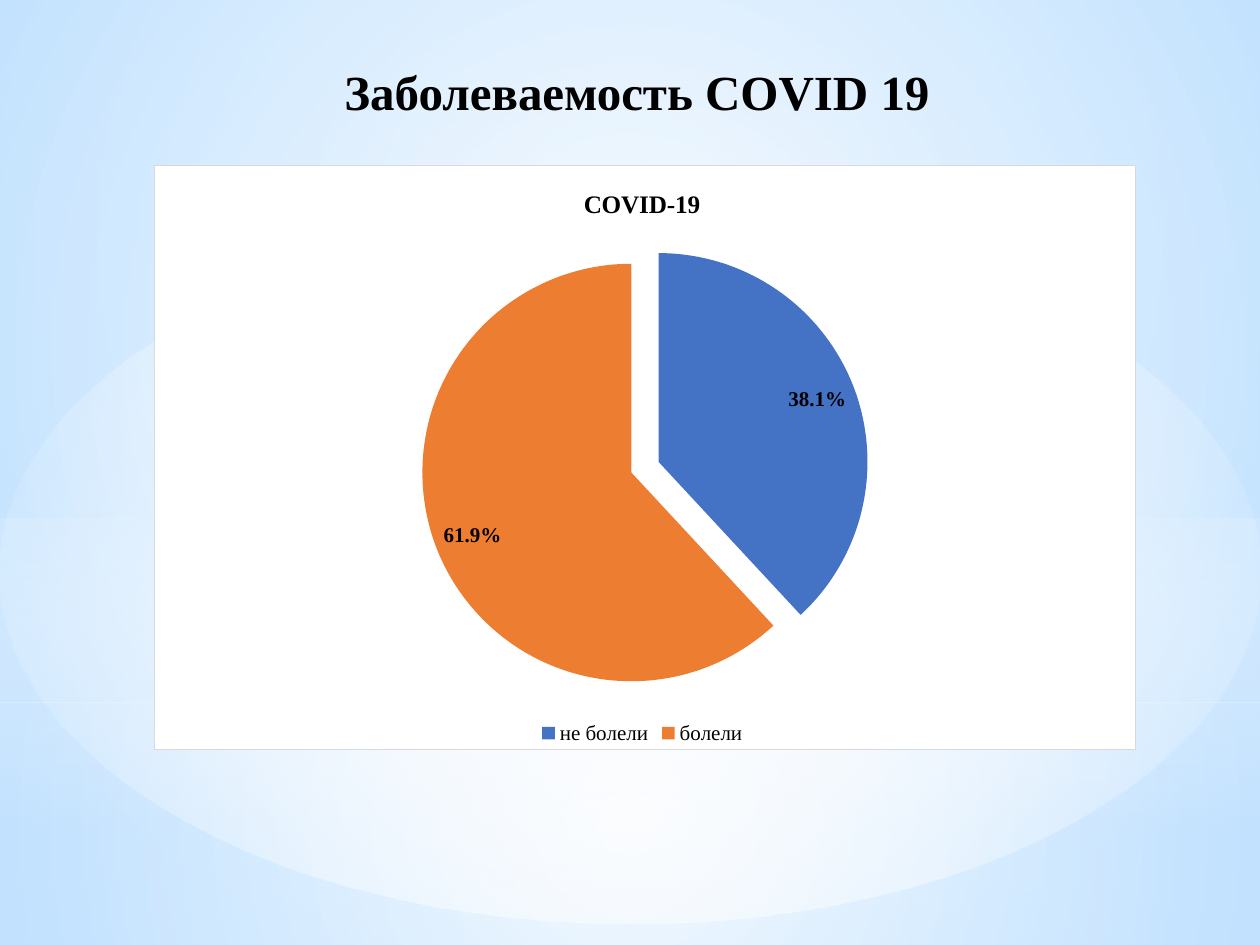
from lxml import etree
from pptx import Presentation
from pptx.chart.data import CategoryChartData
from pptx.dml.color import RGBColor
from pptx.enum.chart import XL_CHART_TYPE, XL_LABEL_POSITION as LabelPos, XL_LEGEND_POSITION as LegendPos
from pptx.enum.shapes import MSO_SHAPE
from pptx.enum.text import PP_ALIGN
from pptx.oxml import parse_xml
from pptx.oxml.ns import nsdecls, qn
from pptx.util import Emu, Pt

PX = 914400 / 126
W, H = 1260, 945
FONT = "Times New Roman"
BLACK = RGBColor(0x00, 0x00, 0x00)
WHITE = RGBColor(0xFF, 0xFF, 0xFF)
PALE = RGBColor(0xD6, 0xEC, 0xFF)
SKY = RGBColor(0xC2, 0xE2, 0xFE)
AZURE = RGBColor(0x79, 0xBF, 0xFF)
BORDER = RGBColor(0xD9, 0xD9, 0xD9)
BLUE = RGBColor(0x44, 0x72, 0xC4)
ORANGE = RGBColor(0xED, 0x7D, 0x31)
CENTER = (50, 50, 50, 50)


def px(*lengths):
    return [Emu(round(n * PX)) for n in lengths]


def gradient(start, end, focus=None):
    """Gradient between two (colour, opacity %) stops: circular if focus is given, else downward."""
    stops = "".join(
        f'<a:gs pos="{pos}"><a:srgbClr val="{color}"><a:alpha val="{opacity * 1000}"/></a:srgbClr></a:gs>'
        for pos, (color, opacity) in ((0, start), (100000, end)))
    if focus:
        sides = " ".join(f'{side}="{n * 1000}"' for side, n in zip("ltrb", focus))
        way = f'<a:path path="circle"><a:fillToRect {sides}/></a:path>'
    else:
        way = '<a:lin ang="5400000" scaled="0"/>'
    return parse_xml(f'<a:gradFill {nsdecls("a")} rotWithShape="1"><a:gsLst>{stops}</a:gsLst>{way}</a:gradFill>')


def set_gradient(fill, parent, grad):
    fill.gradient()
    parent.replace(parent.find(qn("a:gradFill")), grad)


def style_font(font, size, bold=False, color=BLACK, name=FONT):
    font.size, font.bold, font.name = Pt(size), bold, name
    font.color.rgb = color


def add_text(tf, text, align=PP_ALIGN.CENTER, **fmt):
    p = tf.paragraphs[0]
    p.alignment = align
    r = p.add_run()
    r.text = text
    style_font(r.font, **fmt)


def add_backdrop(s, box):
    x, y, w, h = box
    set_gradient(s.background.fill, s.element.find(".//" + qn("p:bgPr")),
                 gradient((SKY, 100), (AZURE, 100), (50, 25, 50, 75)))
    horizon = 703
    layers = [
        (MSO_SHAPE.RECTANGLE, horizon, h - horizon, gradient((WHITE, 91), (PALE, 79), CENTER)),
        (MSO_SHAPE.RECTANGLE, 0, horizon, gradient((WHITE, 89), (PALE, 79), CENTER)),
        (MSO_SHAPE.RECTANGLE, 519, 315, gradient((PALE, 60), (WHITE, 0))),
        (MSO_SHAPE.OVAL, 221, 703, gradient((WHITE, 100), (WHITE, 0), CENTER)),
    ]
    for kind, top, height, grad in layers:
        sp = s.shapes.add_shape(kind, *px(x, y + top, w, height))
        sp.shadow.inherit = False
        sp.line.fill.background()
        set_gradient(sp.fill, sp.element.spPr, grad)


def add_title(s, box):
    tf = s.shapes.add_textbox(*px(*box)).text_frame
    tf.word_wrap = True
    add_text(tf, "Заболеваемость COVID 19", size=28, bold=True)


def add_pie(s, box):
    data = CategoryChartData(number_format="0.0%")
    data.categories = ["не болели", "болели "]
    data.add_series("COVID-19 ", (0.381, 0.619))
    chart = s.shapes.add_chart(XL_CHART_TYPE.PIE, *px(*box), data).chart
    style_font(chart.font, 10, name="Arial")

    # Title and legend
    chart.has_title = True
    add_text(chart.chart_title.text_frame, "COVID-19 ", size=14.4, bold=True)
    chart.chart_title.include_in_layout = False
    chart.has_legend = True
    chart.legend.position = LegendPos.BOTTOM
    chart.legend.include_in_layout = False
    style_font(chart.legend.font, 12)

    # Slices, pulled apart
    plot = chart.plots[0]
    plot.vary_by_categories = True
    series = plot.series[0]
    explosion = etree.Element(qn("c:explosion"), val="7")
    series._element.find(qn("c:tx")).addnext(explosion)
    for i, color in enumerate((BLUE, ORANGE)):
        fill = series.points[i].format.fill
        fill.solid()
        fill.fore_color.rgb = color

    # Value labels
    labels = series.data_labels
    labels.show_value = True
    labels.show_percentage = False
    labels.number_format, labels.number_format_is_linked = "0.0%", False
    labels.position = LabelPos.INSIDE_END
    style_font(labels.font, 12, bold=True)

    # White frame with square corners
    space = chart.element
    space.find(qn("c:txPr")).addprevious(parse_xml(
        f'<c:spPr {nsdecls("c", "a")}><a:solidFill><a:srgbClr val="{WHITE}"/></a:solidFill>'
        f'<a:ln w="{Pt(0.75)}"><a:solidFill><a:srgbClr val="{BORDER}"/></a:solidFill></a:ln></c:spPr>'))
    for old in space.findall(qn("c:roundedCorners")):
        space.remove(old)
    corners = etree.Element(qn("c:roundedCorners"), val="0")
    date = space.find(qn("c:date1904"))
    if date is None:
        space.insert(0, corners)
    else:
        date.addnext(corners)


def main():
    prs = Presentation()
    prs.slide_width, prs.slide_height = px(W, H)
    s = prs.slides.add_slide(prs.slide_layouts[6])
    add_backdrop(s, (0, 0, W, H))
    add_title(s, (171, 55, 932, 72))
    add_pie(s, (154, 165, 982, 585))
    prs.save("out.pptx")


if __name__ == "__main__":
    main()
